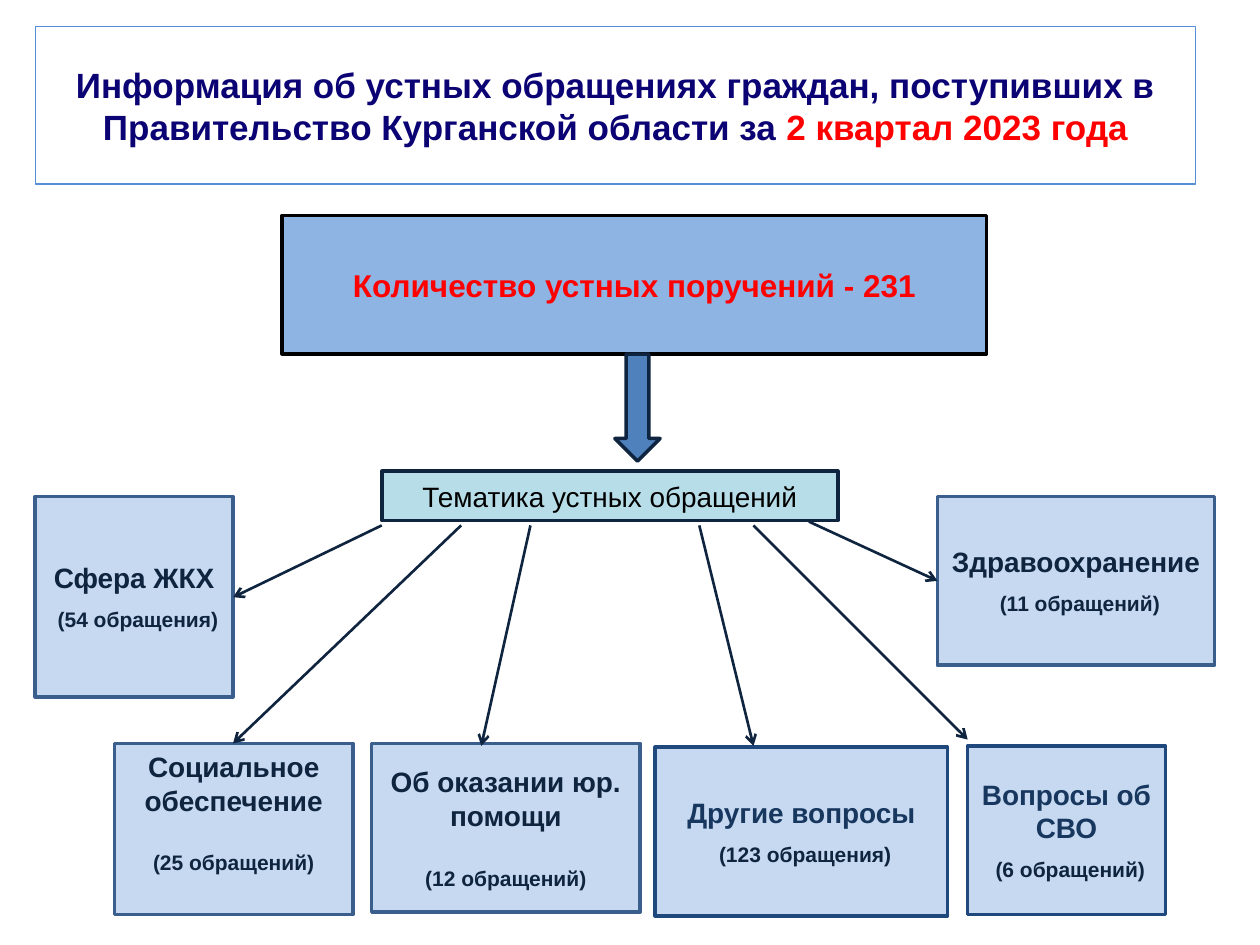
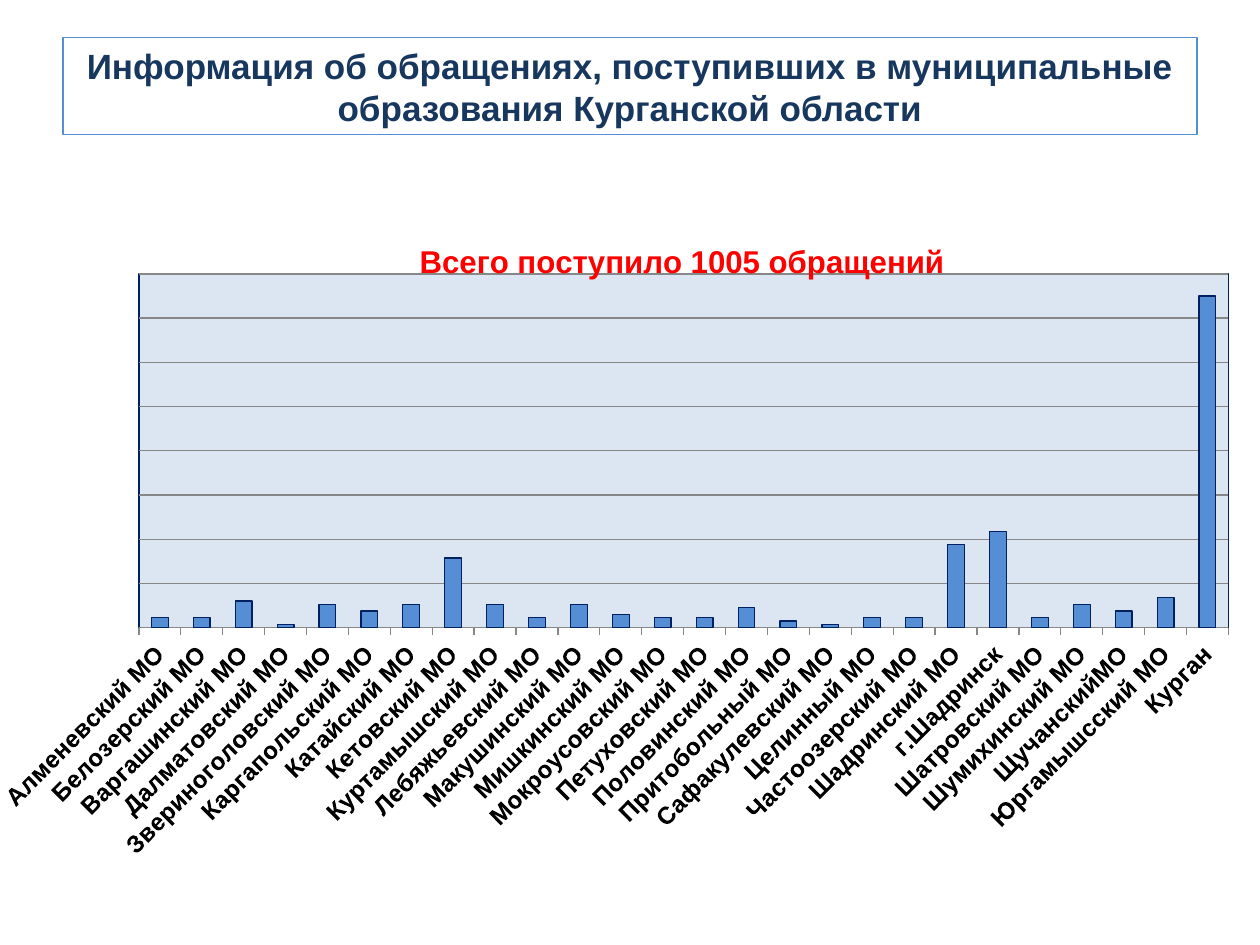
from dataclasses import dataclass

from lxml import etree
from pptx import Presentation
from pptx import util as u
from pptx.chart.data import CategoryChartData
from pptx.dml.color import RGBColor
from pptx.enum import chart as charts, shapes, text
from pptx.oxml import ns, parse_xml


@dataclass(frozen=True)
class Theme:
    font: str = "Arial"
    chart_font: str = "Calibri"
    indigo: str = "0B0373"
    red: str = "FF0000"
    black: str = "000000"
    ink: str = "0F243E"
    navy: str = "17375E"
    frame: str = "558ED5"
    total_fill: str = "8EB4E3"
    hub_fill: str = "B7DEE8"
    arrow_fill: str = "4F81BD"
    topic_fill: str = "C6D9F1"
    topic_line: str = "3A5F8C"
    topic_line_dark: str = "1F497D"
    plot_fill: str = "DCE6F2"
    plot_line: str = "002060"
    grid: str = "878787"
    title: int = 20
    heading: int = 18
    label: int = 16
    axis: int = 14
    count: int = 12
    thin: float = 0.75
    arrow: float = 1.5
    thick: float = 2


T = Theme()


@dataclass(frozen=True)
class Box:
    x: float
    y: float
    w: float
    h: float

    def inside(self, dx, dy, w, h):
        return Box(self.x + dx, self.y + dy, w, h)

    def point(self, dx, dy):
        return u.Inches(self.x + dx), u.Inches(self.y + dy)

    def emu(self):
        return [u.Inches(v) for v in (self.x, self.y, self.w, self.h)]


@dataclass(frozen=True)
class Topic:
    name: str
    count: str
    place: tuple
    arrow: tuple
    gap: int = 3
    lead: str = " "
    color: str = T.ink
    border: str = T.topic_line
    anchor: text.MSO_ANCHOR = text.MSO_ANCHOR.MIDDLE


# All places are relative to the diagram box
TOPICS = [
    Topic("Сфера ЖКХ", "(54 обращения)", (0, 2.23, 1.57, 1.59),
          ((2.75, 2.46), (1.57, 3.03))),
    Topic("Социальное обеспечение", "(25 обращений)", (0.63, 4.19, 1.89, 1.36),
          ((3.38, 2.46), (1.57, 4.19)), gap=19, lead="",
          anchor=text.MSO_ANCHOR.TOP),
    Topic("Здравоохранение", "(11 обращений)", (7.16, 2.23, 2.2, 1.34),
          ((6.14, 2.43), (7.16, 2.9))),
    Topic("Об оказании юр. помощи", "(12 обращений)", (2.67, 4.19, 2.13, 1.34),
          ((3.93, 2.46), (3.54, 4.21)), gap=19, lead=""),
    Topic("Другие вопросы", "(123 обращения)", (4.92, 4.22, 2.32, 1.34),
          ((5.27, 2.46), (5.7, 4.21)),
          color=T.navy, border=T.topic_line_dark),
    Topic("Вопросы об СВО", "(6 обращений)", (7.4, 4.21, 1.57, 1.34),
          ((5.7, 2.46), (7.4, 4.16)),
          color=T.navy, border=T.topic_line_dark),
]

APPEALS = {
    "Алменевский МО": 3, "Белозерский МО": 3, "Варгашинский МО": 8,
    "Далматовский МО": 1, "Звериноголовский МО": 7, "Каргапольский МО": 5,
    "Катайский МО": 7, "Кетовский МО": 21, "Куртамышский МО": 7,
    "Лебяжьевский МО": 3, "Макушинский МО": 7, "Мишкинский МО": 4,
    "Мокроусовский МО": 3, "Петуховский МО": 3, "Половинский МО": 6,
    "Притобольный МО": 2, "Сафакулевский МО": 1, "Целинный МО": 3,
    "Частоозерский МО": 3, "Шадринский МО": 25, "г.Шадринск": 29,
    "Шатровский МО": 3, "Шумихинский МО": 7, "ЩучанскийМО": 5,
    "Юргамышсский МО": 9, "Курган": 100,
}
GRID_STEP, GRID_BANDS = 13.33, 8


def rgb(value):
    return RGBColor.from_string(value)


def style_line(line, color, width):
    line.color.rgb = rgb(color)
    line.width = u.Pt(width)


def style_font(font, size, color, bold=True, name=T.font):
    font.name, font.size, font.bold = name, u.Pt(size), bold
    font.color.rgb = rgb(color)


def add_block(slide, box, fill, border, width,
              kind=shapes.MSO_SHAPE.RECTANGLE):
    block = slide.shapes.add_shape(kind, *box.emu())
    block.shadow.inherit = False
    if fill:
        block.fill.solid()
        block.fill.fore_color.rgb = rgb(fill)
    else:
        block.fill.background()
    style_line(block.line, border, width)
    return block


def write(block, paragraphs, anchor=text.MSO_ANCHOR.MIDDLE):
    """Each paragraph is (space before, runs); a run is (words, size, color, bold)."""
    frame = block.text_frame
    frame.word_wrap = True
    frame.vertical_anchor = anchor
    for index, (gap, runs) in enumerate(paragraphs):
        para = frame.add_paragraph() if index else frame.paragraphs[0]
        para.alignment = text.PP_ALIGN.CENTER
        para.space_before = u.Pt(gap)
        for words, size, color, bold in runs:
            run = para.add_run()
            run.text = words
            style_font(run.font, size, color, bold)


def add_arrow(slide, start, end):
    arrow = slide.shapes.add_connector(shapes.MSO_CONNECTOR.STRAIGHT, *start, *end)
    style_line(arrow.line, T.ink, T.arrow)
    tail = etree.SubElement(arrow.line._get_or_add_ln(), ns.qn("a:tailEnd"))
    tail.set("type", "arrow")
    etree.SubElement(arrow._element.spPr, ns.qn("a:effectLst"))


def add_title(slide, box, *runs):
    banner = add_block(slide, box, None, T.frame, T.thin)
    write(banner, [(0, [(words, T.title, color, True) for words, color in runs])])


def add_topic(slide, box, topic):
    card = add_block(slide, box, T.topic_fill, topic.border, T.thick)
    count_runs = [(topic.count, T.count, T.ink, True)]
    if topic.lead:
        count_runs.insert(0, (topic.lead, T.label, topic.color, True))
    write(card, [(0, [(topic.name, T.label, topic.color, True)]),
                 (topic.gap, count_runs)], topic.anchor)


def add_diagram(slide, box):
    # Total number of requests
    total = add_block(slide, box.inside(1.96, 0, 5.59, 1.1),
                      T.total_fill, T.black, T.thick)
    write(total, [(0, [("Количество устных поручений - 231",
                        T.heading, T.red, True)])])
    # Hub and the arrow that leads to it
    hub = add_block(slide, box.inside(2.75, 2.03, 3.62, 0.39),
                    T.hub_fill, T.ink, T.thick)
    write(hub, [(0, [("Тематика устных обращений", T.label, T.black, False)])])
    add_block(slide, box.inside(4.6, 1.1, 0.36, 0.85), T.arrow_fill, T.ink,
              T.thick, shapes.MSO_SHAPE.DOWN_ARROW)
    # Topics with their arrows
    for topic in TOPICS:
        add_topic(slide, box.inside(*topic.place), topic)
        start, end = topic.arrow
        add_arrow(slide, box.point(*start), box.point(*end))


def chart_layout(x, y, w=None, h=None):
    """Manual layout in fractions of the chart area."""
    parts = [("xMode", "edge"), ("yMode", "edge"), ("x", x), ("y", y)]
    if w:
        parts = [("layoutTarget", "inner")] + parts + [("w", w), ("h", h)]
    body = "".join(f'<c:{tag} val="{val}"/>' for tag, val in parts)
    return parse_xml(f'<c:layout {ns.nsdecls("c")}><c:manualLayout>{body}'
                     '</c:manualLayout></c:layout>')


def set_layout(parent, layout, index):
    for old in parent.findall(ns.qn("c:layout")):
        parent.remove(old)
    parent.insert(index, layout)


def add_appeals_chart(slide, box):
    data = CategoryChartData()
    data.categories = list(APPEALS)
    data.add_series("Series 1", list(APPEALS.values()))
    chart = slide.shapes.add_chart(charts.XL_CHART_TYPE.COLUMN_CLUSTERED,
                                   *box.emu(), data).chart
    chart.has_legend = False
    style_font(chart.font, T.heading, T.black, False, T.chart_font)

    # Heading
    chart.has_title = True
    heading = chart.chart_title.text_frame.paragraphs[0].add_run()
    heading.text = "Всего поступило 1005 обращений"
    style_font(heading.font, T.heading, T.red)
    chart.chart_title.include_in_layout = False
    set_layout(chart.chart_title._element, chart_layout(0.33, 0.04), 1)

    # Columns
    columns = chart.plots[0]
    columns.gap_width = 150
    columns.vary_by_categories = False
    appeals = columns.series[0]
    appeals.format.fill.solid()
    appeals.format.fill.fore_color.rgb = rgb(T.frame)
    style_line(appeals.format.line, T.plot_line, T.thin)

    # Axes
    districts = chart.category_axis
    districts.major_tick_mark = charts.XL_TICK_MARK.OUTSIDE
    style_line(districts.format.line, T.grid, T.thin)
    style_font(districts.tick_labels.font, T.axis, T.black)
    districts._element.txPr.find(ns.qn("a:bodyPr")).set("rot", "-2700000")
    scale = chart.value_axis
    scale.visible = False
    scale.has_major_gridlines = True
    style_line(scale.major_gridlines.format.line, T.grid, T.thin)
    scale.minimum_scale = 0
    scale.major_unit = GRID_STEP
    scale.maximum_scale = GRID_STEP * GRID_BANDS

    # Plot area
    plot_area = chart._chartSpace.chart.plotArea
    set_layout(plot_area, chart_layout(0.104, 0.091, 0.895, 0.461), 0)
    plot_area.append(parse_xml(
        f'<c:spPr {ns.nsdecls("c", "a")}>'
        f'<a:solidFill><a:srgbClr val="{T.plot_fill}"/></a:solidFill>'
        f'<a:ln w="{u.Pt(T.thin)}"><a:solidFill><a:srgbClr val="{T.plot_line}"/>'
        '</a:solidFill></a:ln></c:spPr>'))


def main():
    deck = Presentation()
    deck.slide_width, deck.slide_height = u.Inches(10), u.Inches(7.5)
    blank = deck.slide_layouts[6]

    # Oral requests by topic
    oral = deck.slides.add_slide(blank)
    add_title(oral, Box(0.28, 0.21, 9.21, 1.25),
              ("Информация об устных обращениях граждан, поступивших в "
               "Правительство Курганской области за ", T.indigo),
              ("2 квартал 2023 года", T.red))
    add_diagram(oral, Box(0.28, 1.71, 9.36, 5.56))

    # Requests by municipality
    local = deck.slides.add_slide(blank)
    add_title(local, Box(0.5, 0.3, 9, 0.77),
              ("Информация об обращениях, поступивших в муниципальные "
               "образования Курганской области", T.navy))
    add_appeals_chart(local, Box(0, 1.62, 9.76, 6.09))

    deck.save("out.pptx")


if __name__ == "__main__":
    main()
